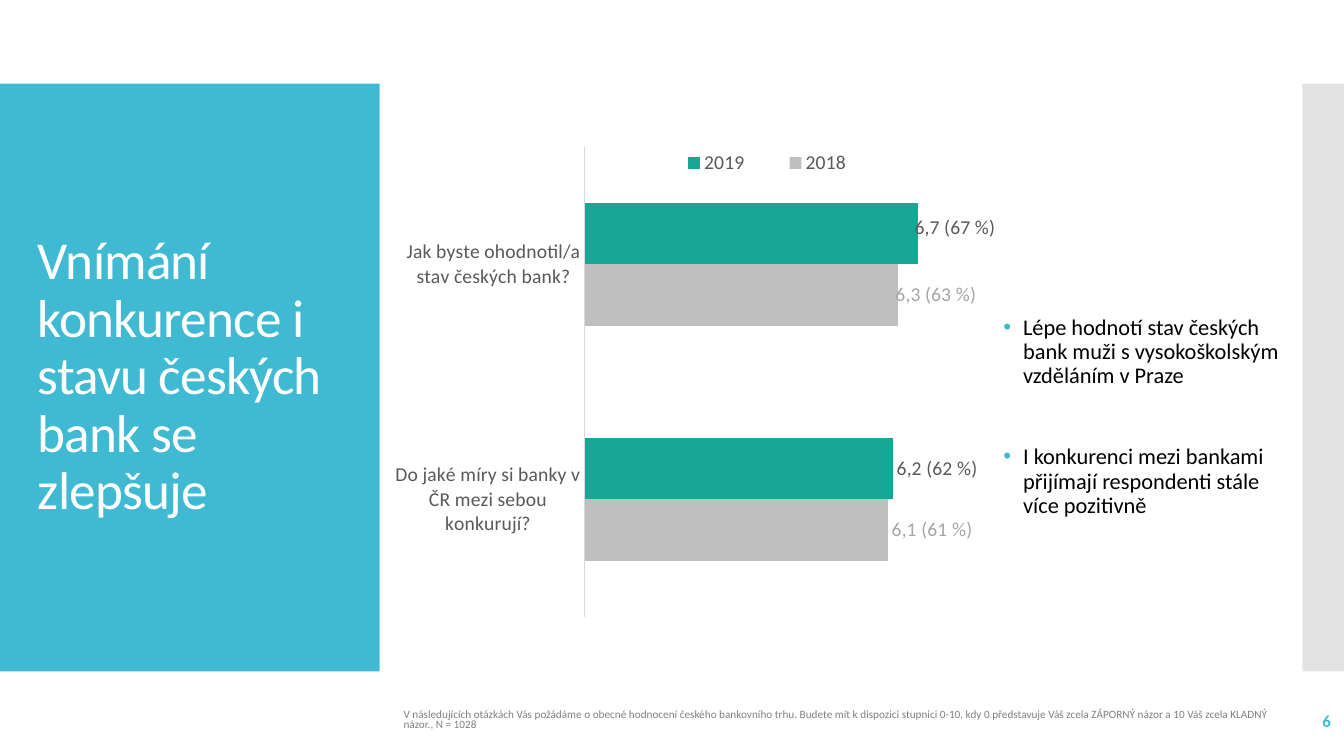
from lxml import etree
from pptx import Presentation
from pptx.chart.data import CategoryChartData as ChartData
from pptx.dml.color import RGBColor
from pptx.enum.chart import XL_CHART_TYPE as Kind, XL_LABEL_POSITION as Spot
from pptx.enum.chart import XL_LEGEND_POSITION as Side, XL_TICK_MARK as Tick
from pptx.enum.chart import XL_TICK_LABEL_POSITION as TickPos
from pptx.enum.shapes import MSO_SHAPE as Shape
from pptx.enum.text import MSO_ANCHOR as Anchor, MSO_AUTO_SIZE as Fit, PP_ALIGN as Align
from pptx.oxml import parse_xml
from pptx.oxml.ns import qn
from pptx.util import Cm, Pt

CHART_NS = "http://schemas.openxmlformats.org/drawingml/2006/chart"


def color(code):
    return RGBColor.from_string(code)


def paint(fill, code):
    fill.solid()
    fill.fore_color.rgb = color(code)


def place(node, index, modes=(), **parts):
    """Give a chart part a manual layout, in percent of the chart."""
    for old in node.findall(qn("c:layout")):
        node.remove(old)
    vals = dict(modes) | {key: part / 100 for key, part in parts.items()}
    body = "".join(f'<c:{key} val="{val}"/>' for key, val in vals.items())
    node.insert(index, parse_xml(
        f'<c:layout xmlns:c="{CHART_NS}"><c:manualLayout>{body}</c:manualLayout></c:layout>'))


class Deck:
    font = "Calibri"
    accent = "40BAD2"
    dark = "595959"

    def __init__(self):
        self.prs = Presentation()
        self.prs.slide_width, self.prs.slide_height = Cm(33.87), Cm(19.05)
        self.slide = self.prs.slides.add_slide(self.prs.slide_layouts[1])
        self.shapes = self.slide.shapes

    def style(self, font, size, code, bold=False):
        font.name, font.size, font.bold = self.font, Pt(size), bold
        font.color.rgb = color(code)

    def panel(self, box, code, alpha=None):
        rect = self.shapes.add_shape(Shape.RECTANGLE, *map(Cm, box))
        rect.shadow.inherit = False
        paint(rect.fill, code)
        rect.line.fill.background()
        if alpha:
            tint = rect.fill._xPr.find(".//" + qn("a:srgbClr"))
            etree.SubElement(tint, qn("a:alpha")).set("val", str(alpha * 1000))
        # Panels lie behind the placeholders
        self.shapes._spTree.insert(2, rect._element)

    def fill(self, shape, box, lines, size, code, align=Align.LEFT, space=None,
             bold=False, bullet=False, gap=0, track=None):
        shape.left, shape.top, shape.width, shape.height = map(Cm, box)
        frame = shape.text_frame
        frame.word_wrap, frame.auto_size = True, Fit.NONE
        frame.vertical_anchor = Anchor.MIDDLE
        for num, line in enumerate(lines):
            para = frame.add_paragraph() if num else frame.paragraphs[0]
            para.text = line
            if bullet:
                self.bullet(para)
            para.alignment, para.line_spacing = align, space
            para.space_before = Pt(gap if num else 0)
            for run in para.runs:
                self.style(run.font, size, code, bold)
                if track:
                    run.font._element.set("spc", str(track))

    def bullet(self, para):
        props = para._p.get_or_add_pPr()
        props.set("marL", str(Cm(0.5)))
        props.set("indent", str(Cm(-0.5)))
        tint = etree.SubElement(props, qn("a:buClr"))
        etree.SubElement(tint, qn("a:srgbClr")).set("val", self.accent)
        etree.SubElement(props, qn("a:buChar")).set("char", "•")

    def title(self, box, line, **look):
        self.fill(self.shapes.title, box, [line], **look)

    def list(self, box, lines, **look):
        self.fill(self.slide.placeholders[1], box, lines, bullet=True, **look)

    def text(self, box, line, **look):
        self.fill(self.shapes.add_textbox(*map(Cm, box)), box, [line], **look)

    def bars(self, box, cats, rows):
        data = ChartData(number_format="0.0")
        data.categories = cats
        for name, vals, *_ in rows:
            data.add_series(name, vals)
        chart = self.shapes.add_chart(Kind.BAR_CLUSTERED, *map(Cm, box), data).chart
        self.style(chart.font, 16, "000000")
        chart.has_title = False
        plot = chart.plots[0]
        plot.gap_width, plot.overlap, plot.vary_by_categories = 182, 0, False

        # Axes
        axis = chart.value_axis
        axis.minimum_scale, axis.maximum_scale = 0, 10
        axis.has_major_gridlines = axis.visible = False
        axis = chart.category_axis
        axis.major_tick_mark = axis.minor_tick_mark = Tick.NONE
        axis.tick_label_position = TickPos.NEXT_TO_AXIS
        axis.format.line.width = Pt(0.75)
        axis.format.line.color.rgb = color("D9D9D9")
        self.style(axis.tick_labels.font, 14, self.dark)

        # Bars and their labels
        for bar, (_, _, code, ink, notes, shifts) in zip(plot.series, rows):
            paint(bar.format.fill, code)
            labels = bar.data_labels
            labels.show_value, labels.position = True, Spot.OUTSIDE_END
            labels.number_format, labels.number_format_is_linked = "0.0", False
            self.style(labels.font, 14, ink)
            for num, (note, shift) in enumerate(zip(notes, shifts)):
                label = bar.points[num].data_label
                label.text_frame.text = note
                self.style(label.text_frame.paragraphs[0].runs[0].font, 14, ink)
                label.position = Spot.OUTSIDE_END
                if shift:
                    node = bar._element.findall(".//" + qn("c:dLbl"))[num]
                    place(node, 1, x=shift[0], y=shift[1])

        # Legend and plot area
        edge = {"xMode": "edge", "yMode": "edge"}
        chart.has_legend = True
        chart.legend.position = Side.BOTTOM
        chart.legend.include_in_layout = False
        self.style(chart.legend.font, 14, self.dark)
        place(chart.legend._element, 1, edge, x=37, y=3.9, w=34, h=8)
        area = chart._chartSpace.find(".//" + qn("c:plotArea"))
        place(area, 0, {"layoutTarget": "inner"} | edge, x=27.6, y=4.6, w=71.9, h=94.8)


def main():
    deck = Deck()

    # Side panels
    deck.panel((0, 2.11, 9.57, 14.81), deck.accent)
    deck.panel((32.82, 2.11, 1.05, 14.81), "C8C8C8", alpha=50)

    # Title and findings
    deck.title((0.7, 3.12, 8.18, 12.78),
               "Vnímání konkurence i stavu českých bank se zlepšuje",
               size=38, code="FFFFFF", space=0.9, track=-60)
    deck.list((25.03, 5.6, 7.77, 9.81),
              ["Lépe hodnotí stav českých bank muži s vysokoškolským vzděláním v Praze",
               "I konkurenci mezi bankami přijímají respondenti stále více pozitivně"],
              size=16, code="000000", space=0.9, gap=41)

    # Ratings by year
    deck.bars((9.92, 3.12, 17.43, 12.5),
              ["Do jaké míry si banky v ČR mezi sebou konkurují?",
               "Jak byste ohodnotil/a stav českých bank?"],
              [("2018", (6.1, 6.3), "BFBFBF", "A6A6A6",
                ("6,1 (61 %)", "6,3 (63 %) "), (None, (-0.9, 0))),
               ("2019", (6.2, 6.7), "18A794", deck.dark,
                ("6,2 (62 %)", "6,7 (67 %)"), (None, (-1, -1.2)))])

    # Footer
    deck.text((29.55, 17.65, 4.24, 1.02), "6", size=12, code=deck.accent,
              align=Align.RIGHT, bold=True)
    deck.text((9.92, 17.73, 22.91, 0.86),
              "V následujících otázkách Vás požádáme o obecné hodnocení českého bankovního trhu. "
              "Budete mít k dispozici stupnici 0-10, kdy 0 představuje Váš zcela ZÁPORNÝ názor "
              "a 10 Váš zcela KLADNÝ názor., N = 1028",
              size=8, code="808080", space=0.7)

    deck.prs.save("out.pptx")


if __name__ == "__main__":
    main()
